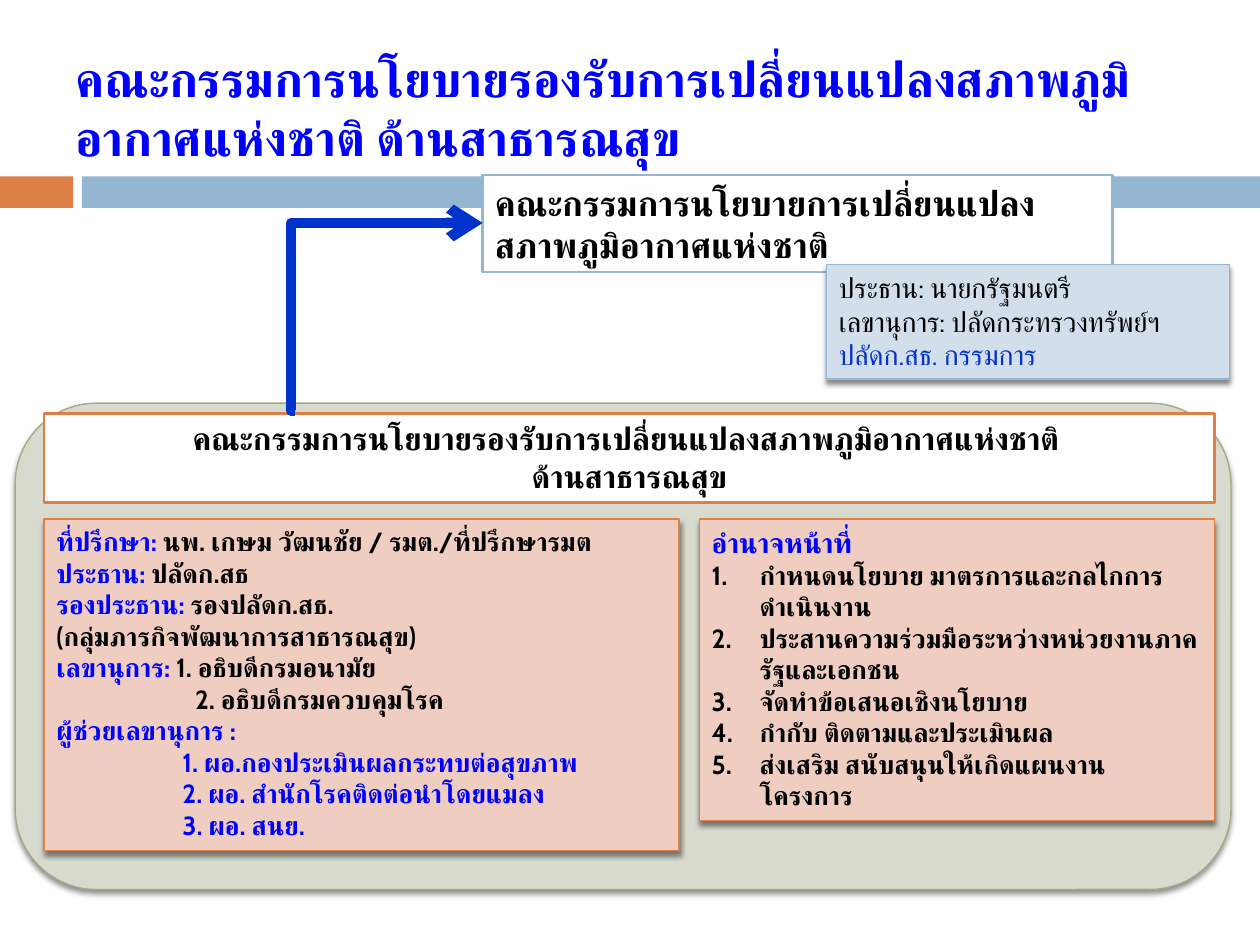
from lxml.etree import SubElement
from pptx import Presentation
from pptx.dml.color import RGBColor
from pptx.enum.shapes import MSO_CONNECTOR, MSO_SHAPE
from pptx.enum.text import MSO_ANCHOR, MSO_AUTO_SIZE, PP_ALIGN
from pptx.oxml.ns import qn
from pptx.util import Inches, Pt

WHITE = RGBColor(0xFF, 0xFF, 0xFF)
BLACK = RGBColor(0x00, 0x00, 0x00)
BLUE = RGBColor(0x00, 0x00, 0xFF)
ROYAL = RGBColor(0x00, 0x33, 0xCC)
ORANGE = RGBColor(0xDD, 0x80, 0x47)
PEACH = RGBColor(0xEF, 0xCD, 0xC1)
SKY = RGBColor(0x94, 0xB6, 0xD2)
PALE_SKY = RGBColor(0xD2, 0xDE, 0xEA)
SAGE = RGBColor(0xA5, 0xAB, 0x81)
PALE_SAGE = RGBColor(0xD8, 0xDA, 0xCD)

COLUMNS, ROWS = 100, 75
LEFT, RIGHT = 3.5, 96.4
PANEL_TOP = 41.2

ADVISERS = [
    [("ที่ปรึกษา: ", BLUE), ("นพ. เกษม วัฒนชัย / รมต./ที่ปรึกษารมต", BLACK)],
    [("ประธาน: ", BLUE), ("ปลัดก.สธ", BLACK)],
    [("รองประธาน: ", BLUE), ("รองปลัดก.สธ.", BLACK)],
    [("(กลุ่มภารกิจพัฒนาการสาธารณสุข)", BLACK)],
    [("เลขานุการ: ", BLUE), ("1. อธิบดีกรมอนามัย", BLACK)],
    [("2. อธิบดีกรมควบคุมโรค", BLACK)],
    [("ผู้ช่วยเลขานุการ :", BLUE)],
    [("1. ผอ.กองประเมินผลกระทบต่อสุขภาพ", BLUE)],
    [("2. ผอ. สำนักโรคติดต่อนำโดยแมลง", BLUE)],
    [("3. ผอ. สนย.", BLUE)],
]
ADVISER_INDENTS = {5: 1.1, 7: 1, 8: 1, 9: 1}
DUTIES = [
    "กำหนดนโยบาย มาตรการและกลไกการ ดำเนินงาน",
    "ประสานความร่วมมือระหว่างหน่วยงานภาครัฐและเอกชน",
    "จัดทำข้อเสนอเชิงนโยบาย",
    "กำกับ ติดตามและประเมินผล",
    "ส่งเสริม สนับสนุนให้เกิดแผนงาน โครงการ",
]


class SlideBuilder:
    """Holds the style and the current slide, measured on a 100 by 75 grid."""

    font = "Cabin"

    def __init__(self, presentation):
        self.slide = presentation.slides.add_slide(presentation.slide_layouts[6])
        self.column = presentation.slide_width / COLUMNS
        self.row = presentation.slide_height / ROWS

    def place(self, left, top, width, height):
        """Turn grid units into slide lengths."""
        return (round(left * self.column), round(top * self.row),
                round(width * self.column), round(height * self.row))

    def box(self, area, fill, line=None, weight=0.79, shadow=False, kind=MSO_SHAPE.RECTANGLE):
        """Draw a filled shape with an optional outline and shadow."""
        shape = self.slide.shapes.add_shape(kind, *self.place(*area))
        shape.fill.solid()
        shape.fill.fore_color.rgb = fill
        if line is None:
            shape.line.fill.background()
        else:
            shape.line.color.rgb = line
            shape.line.width = Pt(weight)
        shape.shadow.inherit = False
        if shadow:
            effects = shape.element.spPr.find(qn("a:effectLst"))
            outer = SubElement(effects, qn("a:outerShdw"), blurRad=str(Pt(3)),
                               dist=str(Pt(2.4)), dir="5400000", rotWithShape="0")
            color = SubElement(outer, qn("a:srgbClr"), val="000000")
            SubElement(color, qn("a:alpha"), val="45000")
        return shape

    def title(self, area, text, size):
        """Add the heading in a text box."""
        shape = self.slide.shapes.add_textbox(*self.place(*area))
        self.set_lines(shape, [[(text, BLUE)]], size)
        shape.text_frame.auto_size = MSO_AUTO_SIZE.NONE
        shape.text_frame.vertical_anchor = MSO_ANCHOR.MIDDLE

    def set_lines(self, shape, lines, size, bold=True, align=PP_ALIGN.LEFT):
        """Fill a shape with paragraphs of coloured runs."""
        frame = shape.text_frame
        frame.word_wrap = True
        frame.auto_size = MSO_AUTO_SIZE.SHAPE_TO_FIT_TEXT
        frame.vertical_anchor = MSO_ANCHOR.TOP
        frame.text = "\n".join("" for _ in lines)
        for paragraph, pieces in zip(frame.paragraphs, lines):
            paragraph.alignment = align
            for text, color in pieces:
                run = paragraph.add_run()
                run.text = text
                run.font.name = self.font
                run.font.size = Pt(size)
                run.font.bold = bold
                run.font.color.rgb = color
                SubElement(run.font._element, qn("a:cs"), typeface=self.font)
        return frame.paragraphs

    def indent(self, paragraph, margin, first=0, numbered=False):
        """Indent a paragraph in inches and number it if wanted."""
        properties = paragraph._p.get_or_add_pPr()
        properties.set("marL", str(Inches(margin)))
        properties.set("indent", str(Inches(first)))
        if numbered:
            SubElement(properties, qn("a:buFont"), typeface="Arial")
            SubElement(properties, qn("a:buAutoNum"), type="arabicPeriod")

    def elbow_arrow(self, start, end, color, weight, bend):
        """Draw a bent arrow whose bend is a share of its width."""
        connector = self.slide.shapes.add_connector(
            MSO_CONNECTOR.ELBOW, *self.place(*start, *end))
        connector.line.color.rgb = color
        connector.line.width = Pt(weight)
        properties = connector._element.spPr
        guides = properties.find(qn("a:prstGeom")).find(qn("a:avLst"))
        SubElement(guides, qn("a:gd"), name="adj1", fmla=f"val {round(bend * 100000)}")
        SubElement(properties.find(qn("a:ln")), qn("a:tailEnd"), type="arrow")
        SubElement(properties, qn("a:effectLst"))


def main():
    presentation = Presentation()
    presentation.slide_width, presentation.slide_height = Inches(10), Inches(7.5)
    builder = SlideBuilder(presentation)

    builder.box((0, 14, 5.8, 2.5), ORANGE)
    builder.box((6.5, 14, 93.5, 2.5), SKY)
    builder.box((1.2, 32, 96.5, 38.6), PALE_SAGE, SAGE, shadow=True,
                kind=MSO_SHAPE.ROUNDED_RECTANGLE)
    builder.title((5, 2.3, 90, 12.5),
                  "คณะกรรมการนโยบายรองรับการเปลี่ยนแปลงสภาพภูมิอากาศแห่งชาติ ด้านสาธารณสุข", 28)

    policy = builder.box((38.3, 13.9, 50, 7.7), WHITE, SKY, 1.5)
    builder.set_lines(policy, [[("คณะกรรมการนโยบายการเปลี่ยนแปลงสภาพภูมิอากาศแห่งชาติ", BLACK)]], 20)

    members = builder.box((65.6, 21, 32, 9.1), PALE_SKY, SKY, shadow=True)
    builder.set_lines(members, [[("ประธาน: นายกรัฐมนตรี", BLACK)],
                                [("เลขานุการ: ปลัดกระทรวงทรัพย์ฯ", BLACK)],
                                [("ปลัดก.สธ. กรรมการ", ROYAL)]], 16, bold=False)

    committee = builder.box((LEFT, 32.8, RIGHT - LEFT, 7.1), WHITE, ORANGE, 1.5)
    builder.set_lines(committee,
                      [[("คณะกรรมการนโยบายรองรับการเปลี่ยนแปลงสภาพภูมิอากาศแห่งชาติ ", BLACK)],
                       [("ด้านสาธารณสุข", BLACK)]], 18, align=PP_ALIGN.CENTER)

    duties = builder.box((55.5, PANEL_TOP, RIGHT - 55.5, 23.9), PEACH, ORANGE, shadow=True)
    heading, *items = builder.set_lines(
        duties, [[("อำนาจหน้าที่", BLUE)]] + [[(duty, BLACK)] for duty in DUTIES], 15)
    heading.runs[0].font.size = Pt(16)
    builder.indent(heading, 0.38, -0.38)
    for item in items:
        builder.indent(item, 0.38, -0.38, numbered=True)

    advisers = builder.box((LEFT, PANEL_TOP, 50.4, 26.3), PEACH, ORANGE, shadow=True)
    paragraphs = builder.set_lines(advisers, ADVISERS, 15)
    for index, margin in ADVISER_INDENTS.items():
        builder.indent(paragraphs[index], margin)

    builder.elbow_arrow((23.4, 32.6), (38.3, 17.7), ROYAL, 6, -0.02)
    presentation.save("out.pptx")


if __name__ == "__main__":
    main()
